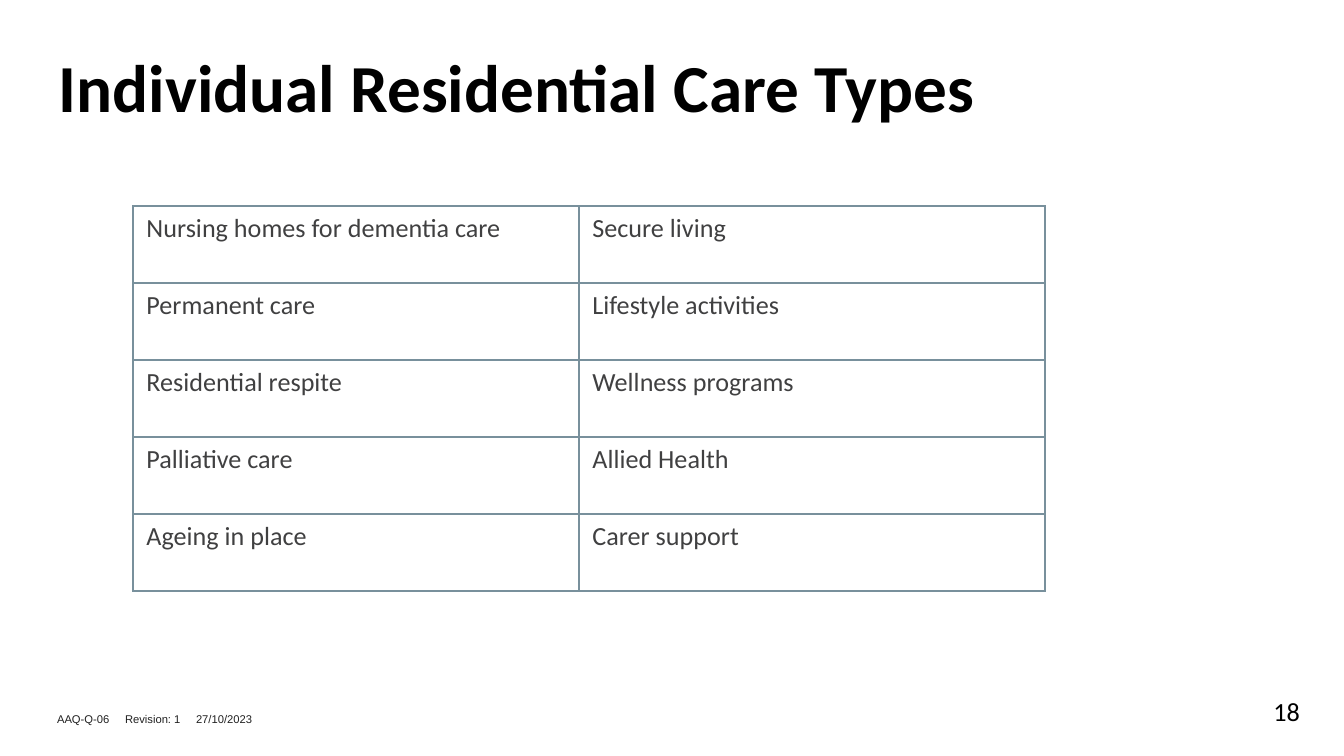
import lxml.etree
import pptx
import pptx.dml.color
import pptx.enum.text
import pptx.oxml.ns
import pptx.util

PX = 914400 / 134.4
MARGIN_X, MARGIN_Y = 13, 7
ALIGN = pptx.enum.text.PP_ALIGN

TITLE_FORMAT = {"name": "Calibri", "size": pptx.util.Pt(36), "bold": True}
BODY_FORMAT = {"name": "Calibri", "size": pptx.util.Pt(14)}
FOOTER_FORMAT = {"name": "Arial", "size": pptx.util.Pt(6)}

CARE_TYPES = [
    ("Nursing homes for dementia care", "Secure living"),
    ("Permanent care", "Lifestyle activities"),
    ("Residential respite", "Wellness programs"),
    ("Palliative care", "Allied Health"),
    ("Ageing in place", "Carer support"),
]


def px(length):
    """Turn pixels into EMU."""
    return pptx.util.Emu(round(length * PX))


def colour(value):
    """Turn a hex string into an RGB colour."""
    return pptx.dml.color.RGBColor.from_string(value)


def add_element(parent, tag, **attributes):
    """Append a DrawingML element to its parent."""
    values = {key: str(value) for key, value in attributes.items()}
    return lxml.etree.SubElement(parent, pptx.oxml.ns.qn(tag), values)


def write(frame, text, text_format, text_colour, align=ALIGN.LEFT, tabs=()):
    """Write one formatted paragraph into a text frame."""
    paragraph = frame.paragraphs[0]
    paragraph.alignment = align
    if tabs:
        tab_list = add_element(paragraph._p.get_or_add_pPr(), "a:tabLst")
        for position in tabs:
            add_element(tab_list, "a:tab", pos=px(position), algn="l")
    run = paragraph.add_run()
    run.text = text
    for name, value in text_format.items():
        setattr(run.font, name, value)
    run.font.color.rgb = colour(text_colour)


def add_text(slide, box, margin_y=MARGIN_Y):
    """Add an empty wrapping text box and return its frame."""
    frame = slide.shapes.add_textbox(*map(px, box)).text_frame
    margins = {"left": MARGIN_X, "right": MARGIN_X, "top": margin_y, "bottom": margin_y}
    for side, margin in margins.items():
        setattr(frame, f"margin_{side}", px(margin))
    frame.word_wrap = True
    return frame


def add_borders(cell, line_colour, points):
    """Draw a solid line on each side of a table cell."""
    properties = cell._tc.get_or_add_tcPr()
    for side in ("a:lnL", "a:lnR", "a:lnT", "a:lnB"):
        line = add_element(properties, side, w=pptx.util.Pt(points))
        add_element(add_element(line, "a:solidFill"), "a:srgbClr", val=line_colour)


def add_title(slide, box):
    """Place the slide title."""
    write(add_text(slide, box, MARGIN_X), "Individual Residential Care Types", TITLE_FORMAT, "000000")


def add_care_table(slide, box, first_column):
    """Place the care types in a bordered two-column table."""
    table = slide.shapes.add_table(len(CARE_TYPES), 2, *map(px, box)).table
    for option in ("first_row", "horz_banding"):
        setattr(table, option, False)
    for column, width in zip(table.columns, (first_column, box[2] - first_column)):
        column.width = px(width)
    for row, texts in zip(table.rows, CARE_TYPES):
        for cell, text in zip(row.cells, texts):
            add_borders(cell, "78909C", 1)
            cell.fill.background()
            write(cell.text_frame, text, BODY_FORMAT, "404041")


def add_footer(slide, box, number_box):
    """Place the document reference and the slide number."""
    reference = "\t".join(("AAQ-Q-06", "Revision: 1", "27/10/2023"))
    write(add_text(slide, box), reference, FOOTER_FORMAT, "212121", tabs=(68, 139))
    write(add_text(slide, number_box), "18", BODY_FORMAT, "000000", ALIGN.RIGHT)


def main():
    """Build and save the presentation."""
    presentation = pptx.Presentation()
    presentation.slide_width, presentation.slide_height = px(1344), px(756)
    slide = presentation.slides.add_slide(presentation.slide_layouts[6])
    add_title(slide, (46, 32, 1253, 85))
    add_care_table(slide, (133, 206, 912, 385), 446)
    add_footer(slide, (44, 706, 226, 28), (1196, 688, 117, 51))
    presentation.save("out.pptx")


if __name__ == "__main__":
    main()
